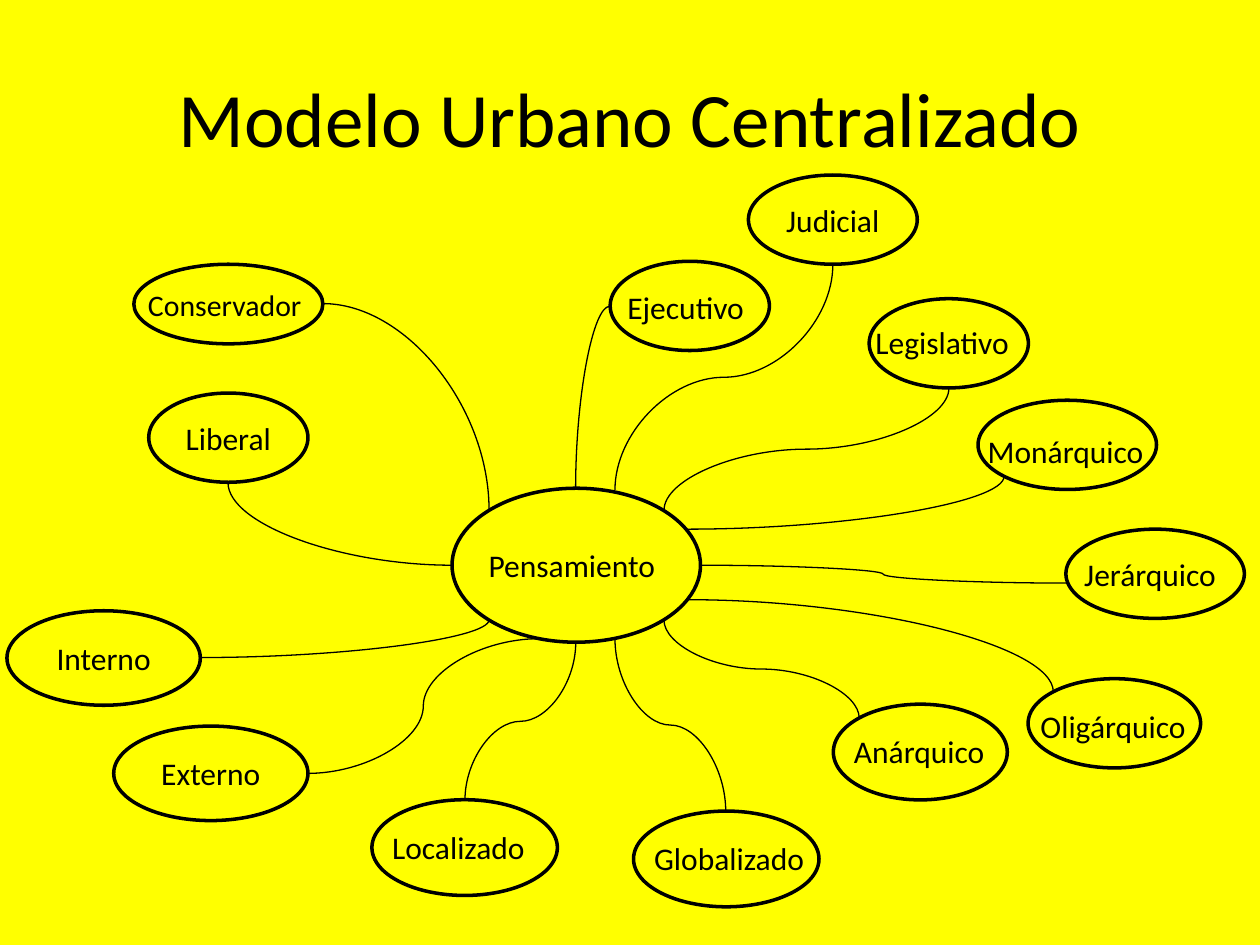
"""Draw a mind map of the centralised urban model."""
from typing import Any, NamedTuple

from lxml import etree
from pptx import Presentation
from pptx.dml.color import RGBColor
from pptx.enum.shapes import MSO_CONNECTOR, MSO_SHAPE
from pptx.enum.text import MSO_ANCHOR, MSO_AUTO_SIZE, PP_ALIGN
from pptx.oxml.ns import qn
from pptx.util import Pt

CURVE = MSO_CONNECTOR.CURVE
OVAL = MSO_SHAPE.OVAL
MIDDLE = MSO_ANCHOR.MIDDLE
GROW = MSO_AUTO_SIZE.SHAPE_TO_FIT_TEXT
LEFT, CENTER = PP_ALIGN.LEFT, PP_ALIGN.CENTER
INK, PAPER = "000000", "FFFF00"


class Box(NamedTuple):
    left: float
    top: float
    width: float
    height: float


class Node(NamedTuple):
    text: str
    oval: Box
    label: Box | None = None
    size: float = 18


class Link(NamedTuple):
    x1: float
    y1: float
    x2: float
    y2: float
    kind: str


NODES = [
    Node("Judicial", Box(427.7, 100, 96.5, 51)),
    Node("Liberal", Box(85, 224.6, 91, 51)),
    Node("Externo", Box(65, 414.9, 111, 54)),
    Node("Interno", Box(4, 349, 110.5, 54)),
    Node("Conservador", Box(76.5, 151, 108, 45.5), Box(77.5, 160.6, 103, 28), 17),
    Node("Ejecutivo", Box(348.7, 149.3, 91, 51), Box(351.4, 161.3, 82, 29)),
    Node("Legislativo", Box(496.7, 170.7, 91, 51), Box(493.2, 180.9, 91.5, 29)),
    Node("Monárquico", Box(558.9, 228.7, 102, 51), Box(557.3, 243.4, 104.5, 29)),
    Node("Jerárquico", Box(609.1, 302.4, 102, 51), Box(612.5, 313.5, 91, 29)),
    Node("Oligárquico", Box(587.5, 387.8, 98.6, 51), Box(587.5, 400.3, 98.6, 29)),
    Node("Anárquico", Box(476.2, 402.4, 99.4, 54.7), Box(480.9, 414.7, 90, 29)),
    Node("Globalizado", Box(362, 463.5, 106, 54.7), Box(366.7, 475.9, 101.5, 29)),
    Node("Localizado", Box(212.5, 457, 106, 54.7), Box(217, 469.4, 91.5, 29)),
]
HUB = Box(258.3, 279, 142, 88)

LINKS = [
    Link(348.5, 175, 329, 279, "bend"),
    Link(114.5, 375.8, 279.5, 354.2, "bend"),
    Link(258.5, 323, 130.3, 275.8, "bend"),
    Link(184.5, 173.5, 279.5, 291.6, "bend"),
    Link(392.6, 302.4, 573.8, 272.2, "bend"),
    Link(392.6, 342.7, 601.9, 395.3, "bend"),
    Link(400.3, 323, 609.1, 333.2, "across"),
    Link(308.2, 365, 175.7, 442, "across"),
    Link(379.4, 291.6, 542.2, 221.8, "down"),
    Link(379.4, 354.2, 491, 410.4, "down"),
    Link(329, 367.2, 265.7, 457.2, "down"),
    Link(351.4, 365, 414.7, 463.7, "down"),
    Link(475.9, 151.2, 351.4, 280, "down"),
]


def tint(code: str) -> RGBColor:
    return RGBColor.from_string(code)


def points(box: Box) -> list[int]:
    return [Pt(side) for side in box]


def write(shape: Any, text: str, size: float, align: PP_ALIGN) -> None:
    para = shape.text_frame.paragraphs[0]
    para.text = text
    para.alignment = align
    para.font.size = Pt(size)
    para.font.name = "Calibri"
    para.font.color.rgb = tint(INK)


def ring(shapes: Any, box: Box) -> Any:
    shape = shapes.add_shape(OVAL, *points(box))
    shape.shadow.inherit = False
    shape.fill.background()
    shape.line.color.rgb = tint(INK)
    shape.line.width = Pt(2)
    return shape


def label(shapes: Any, text: str, box: Box, size: float = 18, align: PP_ALIGN = LEFT) -> None:
    shape = shapes.add_textbox(*points(box))
    shape.text_frame.word_wrap = False
    shape.text_frame.auto_size = GROW
    write(shape, text, size, align)


def draw(shapes: Any, node: Node) -> None:
    if node.label:
        group = shapes.add_group_shape().shapes
        ring(group, node.oval)
        label(group, node.text, node.label, node.size)
    else:
        shape = ring(shapes, node.oval)
        shape.text_frame.word_wrap = False
        shape.text_frame.vertical_anchor = MIDDLE
        write(shape, node.text, node.size, CENTER)


def join(shapes: Any, link: Link) -> None:
    x1, y1, x2, y2, kind = link
    if kind == "down":
        mid_x, mid_y = (x1 + x2) / 2, (y1 + y2) / 2
        half_x, half_y = (y2 - y1) / 2, (x1 - x2) / 2
        x1, y1, x2, y2 = mid_x - half_x, mid_y - half_y, mid_x + half_x, mid_y + half_y
    curve = shapes.add_connector(CURVE, Pt(x1), Pt(y1), Pt(x2), Pt(y2))
    curve.line.color.rgb = tint(INK)
    curve.line.width = Pt(0.75)
    props = curve._element.spPr
    etree.SubElement(props, qn("a:effectLst"))
    if kind == "down":
        props.find(qn("a:xfrm")).set("rot", "5400000")
    if kind == "bend":
        props.find(qn("a:prstGeom")).set("prst", "curvedConnector2")


def main() -> None:
    deck = Presentation()
    deck.slide_width, deck.slide_height = Pt(720), Pt(540)
    slide = deck.slides.add_slide(deck.slide_layouts[6])
    slide.background.fill.solid()
    slide.background.fill.fore_color.rgb = tint(PAPER)
    shapes = slide.shapes
    title = shapes.add_textbox(*points(Box(36, 21.6, 648, 90)))
    title.text_frame.word_wrap = True
    title.text_frame.vertical_anchor = MIDDLE
    write(title, "Modelo Urbano Centralizado", 44, CENTER)
    ring(shapes, HUB)
    for node in NODES:
        draw(shapes, node)
    for link in LINKS:
        join(shapes, link)
    label(shapes, "Pensamiento", Box(269.5, 308.2, 114.5, 29), align=CENTER)
    deck.save("out.pptx")


if __name__ == "__main__":
    main()
